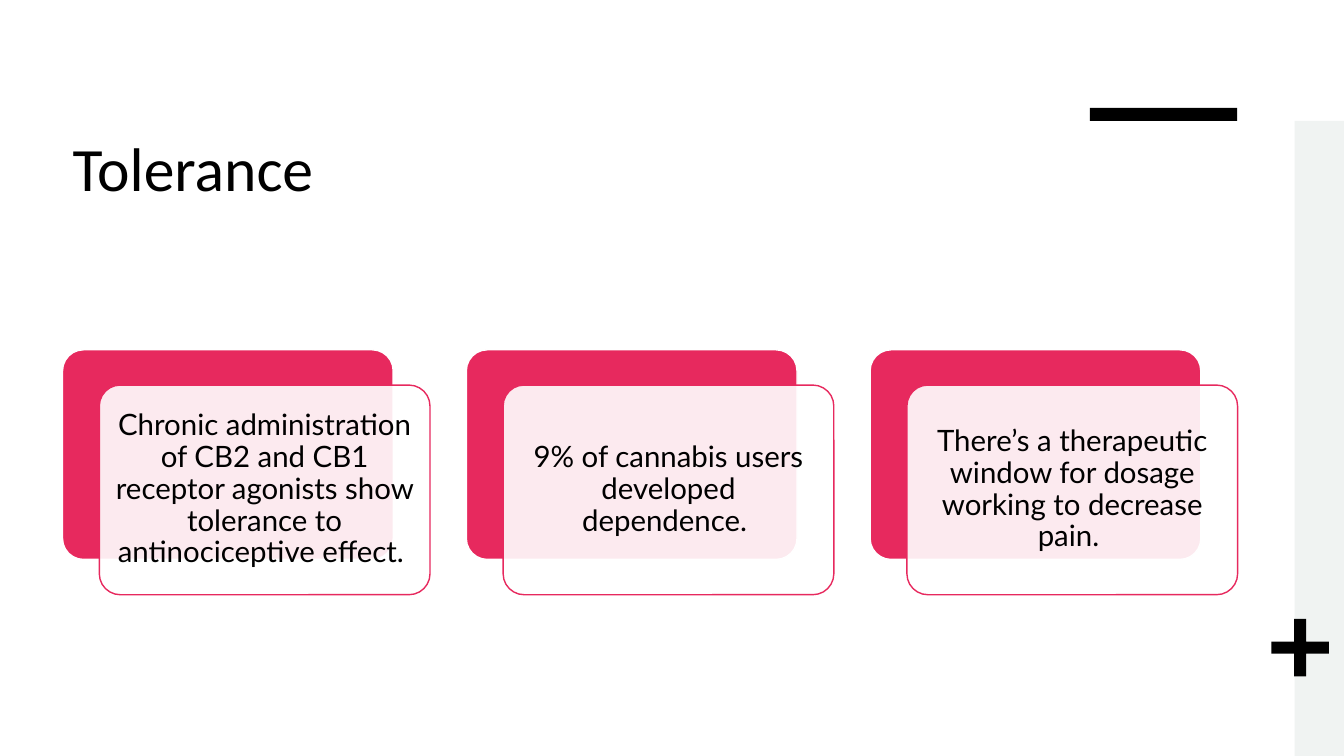
"""Build the Tolerance slide with three offset cards."""
from lxml.etree import SubElement
from pptx import Presentation
from pptx.dml.color import RGBColor
from pptx.enum.shapes import MSO_SHAPE
from pptx.enum.text import MSO_ANCHOR, PP_ALIGN
from pptx.oxml.ns import qn
from pptx.util import Inches, Pt

TITLE = "Tolerance"
CARDS = [
    "Chronic administration of CB2 and CB1 receptor agonists show tolerance to antinociceptive effect. ",
    "9% of cannabis users developed dependence. ",
    "There’s a therapeutic window for dosage working to decrease pain. ",
]
COLORS = {"ink": "000000", "paper": "FFFFFF", "band": "F0F3F2", "accent": "E7295E"}
DECOR = [
    (MSO_SHAPE.RECTANGLE, (12.84, 1.2, 0.5, 6.3), "band", None),
    (MSO_SHAPE.RECTANGLE, (10.81, 1.07, 1.46, 0.13), "ink", None),
    (MSO_SHAPE.CROSS, (12.61, 6.14, 0.57, 0.57), "ink", 0.395),
]
TITLE_BOX = (0.62, 1.32, 9.04, 1.58)
LEFT, TOP, CARD_W, CARD_H = 0.62, 3.47, 3.28, 2.08
PITCH, SHIFT_X, SHIFT_Y = 4.005, 0.365, 0.35
PAD, INSET = 0.06, 0.09
TITLE_FONT = {"name": "Calibri", "size": Pt(44)}
CARD_FONT = {"name": "Lato", "size": Pt(21)}
CARD_FRAME = {
    "word_wrap": True, "vertical_anchor": MSO_ANCHOR.MIDDLE,
    "margin_left": Inches(INSET), "margin_right": Inches(INSET),
    "margin_top": Inches(INSET), "margin_bottom": Inches(INSET),
}
CARD_PARAGRAPH = {"alignment": PP_ALIGN.CENTER, "line_spacing": 0.9}


def color(name):
    return RGBColor.from_string(COLORS[name])


def apply(target, values):
    for name, value in values.items():
        setattr(target, name, value)


def box(*lengths):
    return [Inches(n) for n in lengths]


def add_block(s, kind, place, fill, adj=None, line=None, alpha=None):
    sp = s.shapes.add_shape(kind, *box(*place))
    sp.shadow.inherit = False
    sp.fill.solid()
    sp.fill.fore_color.rgb = color(fill)
    if adj is not None:
        sp.adjustments[0] = adj
    if alpha is not None:
        srgb = sp.fill._xPr.find(qn("a:solidFill")).find(qn("a:srgbClr"))
        SubElement(srgb, qn("a:alpha")).set("val", str(alpha * 1000))
    if line:
        sp.line.color.rgb = color(line)
        sp.line.width = Pt(1)
    else:
        sp.line.fill.background()


def add_text(tf, text, font, paragraph):
    p = tf.paragraphs[0]
    apply(p, paragraph)
    r = p.add_run()
    r.text = text
    apply(r.font, font)
    r.font.color.rgb = color("ink")


def add_card(s, x, text):
    rounded = MSO_SHAPE.ROUNDED_RECTANGLE
    front_x, front_y = x + SHIFT_X, TOP + SHIFT_Y
    add_block(s, rounded, (x, TOP, CARD_W, CARD_H), "accent", 0.1, "paper")
    add_block(s, rounded, (front_x, front_y, CARD_W, CARD_H), "paper", 0.1, "accent", 90)
    place = box(front_x + PAD, front_y + PAD, CARD_W - 2 * PAD, CARD_H - 2 * PAD)
    tf = s.shapes.add_textbox(*place).text_frame
    apply(tf, CARD_FRAME)
    add_text(tf, text, CARD_FONT, CARD_PARAGRAPH)


def main():
    prs = Presentation()
    prs.slide_width, prs.slide_height = box(13.33, 7.5)
    s = prs.slides.add_slide(prs.slide_layouts[5])
    title = s.shapes.title
    apply(title, dict(zip(("left", "top", "width", "height"), box(*TITLE_BOX))))
    title.text_frame.vertical_anchor = MSO_ANCHOR.TOP
    add_text(title.text_frame, TITLE, TITLE_FONT, {"alignment": PP_ALIGN.LEFT, "line_spacing": 0.9})
    for kind, place, fill, adj in DECOR:
        add_block(s, kind, place, fill, adj)
    for i, text in enumerate(CARDS):
        add_card(s, LEFT + i * PITCH, text)
    prs.save("out.pptx")


if __name__ == "__main__":
    main()
